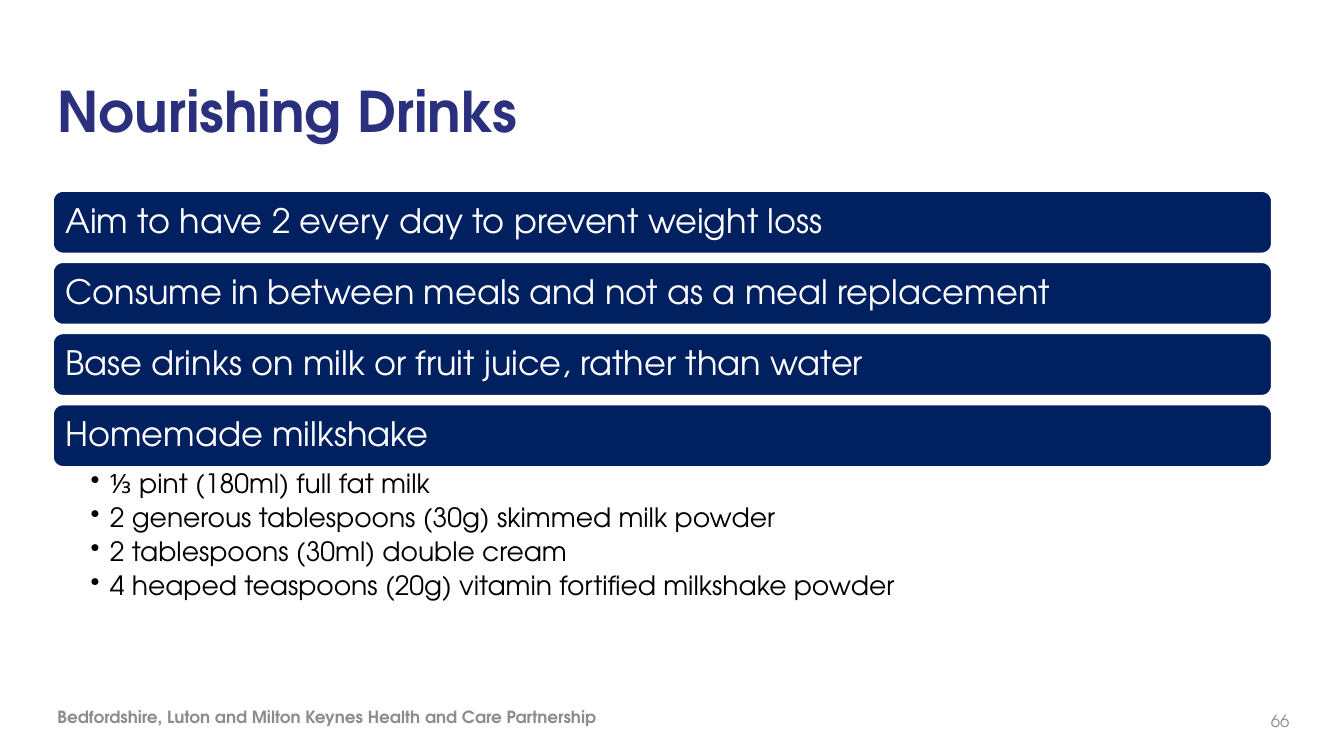
"""Build the Nourishing Drinks slide."""
from lxml import etree
from pptx import Presentation
from pptx.dml.color import RGBColor
from pptx.enum import shapes, text
from pptx.oxml import ns
from pptx.util import Inches, Pt

INDIGO = RGBColor(0x2B, 0x30, 0x7E)
NAVY = RGBColor(0x00, 0x20, 0x60)
GREY = RGBColor(0x8C, 0x8C, 0x8C)
WHITE = RGBColor(0xFF, 0xFF, 0xFF)
BLACK = RGBColor(0x00, 0x00, 0x00)

BARS = [
    "Aim to have 2 every day to prevent weight loss",
    "Consume in between meals and not as a meal replacement",
    "Base drinks on milk or fruit juice, rather than water",
    "Homemade milkshake",
]
RECIPE = [
    "⅓ pint (180ml) full fat milk",
    "2 generous tablespoons (30g) skimmed milk powder",
    "2 tablespoons (30ml) double cream",
    "4 heaped teaspoons (20g) vitamin fortified milkshake powder",
]
LEFT, WIDTH = 0.52, 12.1
BAR_TOP, BAR_HEIGHT, BAR_STEP = 1.89, 0.63, 0.706


class Deck:
    font = "TeX Gyre Adventor"

    def __init__(self, prs):
        self.s = prs.slides.add_slide(prs.slide_layouts[6])

    def frame(self, sp, insets, anchor):
        tf = sp.text_frame
        tf.word_wrap = True
        tf.vertical_anchor = anchor
        tf.margin_left, tf.margin_top, tf.margin_right, tf.margin_bottom = map(Inches, insets)
        return tf

    def style(self, p, size, color, bold=False, after=0, spacing=1.0):
        p.space_after = Pt(after)
        p.line_spacing = spacing
        for r in p.runs:
            r.font.name = self.font
            r.font.size = Pt(size)
            r.font.bold = bold
            r.font.color.rgb = color

    def label(self, box, words, size, color, bold=False, after=0, align=text.PP_ALIGN.LEFT):
        sp = self.s.shapes.add_textbox(*map(Inches, box))
        tf = self.frame(sp, (0, 0, 0, 0), text.MSO_ANCHOR.MIDDLE)
        tf.text = words
        p = tf.paragraphs[0]
        p.alignment = align
        self.style(p, size, color, bold, after)

    def bar(self, top, words):
        box = map(Inches, (LEFT, top, WIDTH, BAR_HEIGHT))
        sp = self.s.shapes.add_shape(shapes.MSO_SHAPE.ROUNDED_RECTANGLE, *box)
        sp.shadow.inherit = False
        sp.fill.solid()
        sp.fill.fore_color.rgb = NAVY
        sp.line.color.rgb = WHITE
        sp.line.width = Pt(2)
        tf = self.frame(sp, (0.1,) * 4, text.MSO_ANCHOR.MIDDLE)
        tf.text = words
        p = tf.paragraphs[0]
        p.alignment = text.PP_ALIGN.LEFT
        self.style(p, 24, WHITE, after=8.4, spacing=0.9)

    def bullets(self, box, lines):
        sp = self.s.shapes.add_textbox(*map(Inches, box))
        tf = self.frame(sp, (0.38, 0.03, 0.19, 0.03), text.MSO_ANCHOR.TOP)
        tf.text = "\n".join(lines)
        for p in tf.paragraphs:
            self.style(p, 19, BLACK, after=3.8, spacing=0.9)
            pPr = p._p.get_or_add_pPr()
            pPr.set("marL", str(Inches(0.19)))
            pPr.set("indent", str(-Inches(0.19)))
            etree.SubElement(pPr, ns.qn("a:buChar")).set("char", "•")


def main():
    prs = Presentation()
    prs.slide_width, prs.slide_height = Inches(13.33), Inches(7.5)
    deck = Deck(prs)
    deck.label((0.57, 0.42, 9.64, 1.35), "Nourishing Drinks", 40, INDIGO, bold=True)
    for i, words in enumerate(BARS):
        deck.bar(BAR_TOP + i * BAR_STEP, words)
    deck.bullets((LEFT, 4.64, WIDTH, 1.44), RECIPE)
    deck.label((0.57, 6.91, 8.1, 0.4),
               "Bedfordshire, Luton and Milton Keynes Health and Care Partnership",
               12, GREY, bold=True, after=6)
    deck.label((12.26, 6.95, 0.53, 0.4), "66", 12, GREY, after=6, align=text.PP_ALIGN.RIGHT)
    prs.save("out.pptx")


if __name__ == "__main__":
    main()
